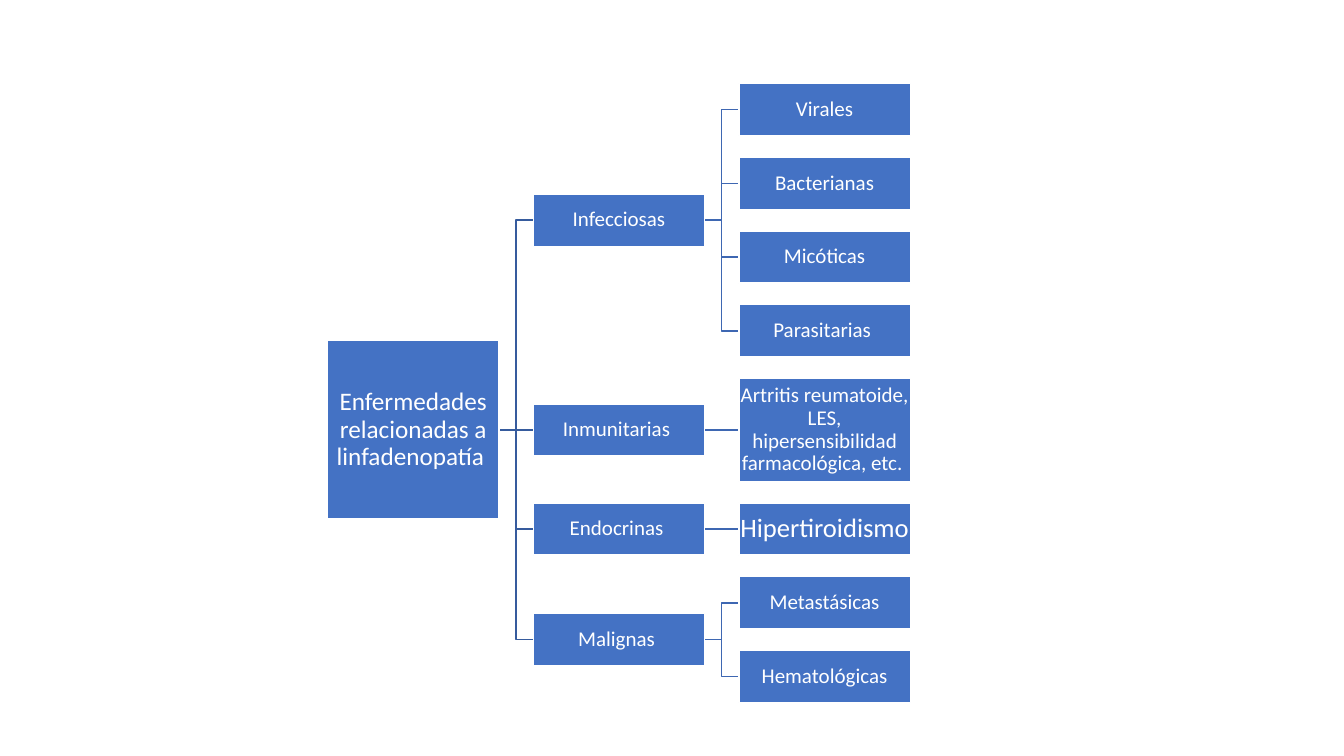
from pptx import Presentation
from pptx.dml.color import RGBColor
from pptx.enum.shapes import MSO_CONNECTOR, MSO_SHAPE
from pptx.enum.text import MSO_ANCHOR, PP_ALIGN
from pptx.oxml import parse_xml
from pptx.oxml.ns import nsdecls
from pptx.util import Pt

RECTANGLE = MSO_SHAPE.RECTANGLE
STRAIGHT, ELBOW = MSO_CONNECTOR.STRAIGHT, MSO_CONNECTOR.ELBOW
MIDDLE, CENTER = MSO_ANCHOR.MIDDLE, PP_ALIGN.CENTER

BLUE = RGBColor(0x44, 0x72, 0xC4)
ROOT_LINE = RGBColor(0x36, 0x5B, 0x9D)
BRANCH_LINE = RGBColor(0x3E, 0x67, 0xB2)
WHITE = RGBColor(0xFF, 0xFF, 0xFF)

# Tree measures in points
COLUMNS = [234 + 146.9 * level for level in range(3)]
BOX_WIDTH, BOX_HEIGHT = 122.4, 37.3
ROOT_HEIGHT, TALL_HEIGHT = 127.4, 73.5
GAP = 15.4
FIRST_TOP = 59.6

# Branch, then its leaves as (text, height, font size)
BRANCHES = [
    ("Infecciosas", [("Virales", BOX_HEIGHT, 15), ("Bacterianas", BOX_HEIGHT, 15),
                     ("Micóticas", BOX_HEIGHT, 15), ("Parasitarias ", BOX_HEIGHT, 15)]),
    ("Inmunitarias ", [("Artritis reumatoide, LES, hipersensibilidad farmacológica, etc. ",
                        TALL_HEIGHT, 15)]),
    ("Endocrinas ", [("Hipertiroidismo ", BOX_HEIGHT, 19)]),
    ("Malignas ", [("Metastásicas", BOX_HEIGHT, 15), ("Hematológicas", BOX_HEIGHT, 15)]),
]

deck = Presentation()
deck.slide_width, deck.slide_height = Pt(960), Pt(540)
page = deck.slides.add_slide(deck.slide_layouts[6])


def add_box(text, level, middle, height, size):
    box = page.shapes.add_shape(RECTANGLE, Pt(COLUMNS[level]), Pt(middle - height / 2),
                                Pt(BOX_WIDTH), Pt(height))
    box.shadow.inherit = False
    box.fill.solid()
    box.fill.fore_color.rgb = BLUE
    box.line.color.rgb = WHITE
    box.line.width = Pt(1)
    frame = box.text_frame
    frame.word_wrap = True
    frame.vertical_anchor = MIDDLE
    frame.margin_left = frame.margin_right = frame.margin_top = frame.margin_bottom = Pt(0.75)
    frame.text = text
    para = frame.paragraphs[0]
    para.alignment = CENTER
    para.line_spacing = 0.9
    font = para.runs[0].font
    font.name, font.size, font.color.rgb = "Calibri", Pt(size), WHITE
    return box


# Boxes: leaves stack downwards, each parent is centred on its children
links = []
branch_boxes = []
branch_middles = []
top = FIRST_TOP
for branch, leaves in BRANCHES:
    leaf_boxes = []
    leaf_middles = []
    for text, height, size in leaves:
        leaf_middles.append(top + height / 2)
        leaf_boxes.append(add_box(text, 2, leaf_middles[-1], height, size))
        top += height + GAP
    middle = (leaf_middles[0] + leaf_middles[-1]) / 2
    branch_box = add_box(branch, 1, middle, BOX_HEIGHT, 15)
    branch_boxes.append(branch_box)
    branch_middles.append(middle)
    links += [(branch_box, leaf_box, BRANCH_LINE) for leaf_box in leaf_boxes]

root_middle = (branch_middles[0] + branch_middles[-1]) / 2
root_box = add_box("Enfermedades relacionadas a linfadenopatía ", 0, root_middle, ROOT_HEIGHT, 18)
links += [(root_box, branch_box, ROOT_LINE) for branch_box in branch_boxes]

# Links: straight when level, otherwise elbows, all behind the boxes
back_box = page.shapes[0]
for parent, child, color in links:
    drop = child.top + child.height / 2 - parent.top - parent.height / 2
    kind = STRAIGHT if abs(drop) < Pt(1) else ELBOW
    link = page.shapes.add_connector(kind, 0, 0, 0, 0)
    link.begin_connect(parent, 3)
    link.end_connect(child, 1)
    link.line.color.rgb = color
    link.line.width = Pt(1)
    link.element.spPr.append(parse_xml(f"<a:effectLst {nsdecls('a')}/>"))
    back_box.element.addprevious(link.element)

deck.save("out.pptx")
